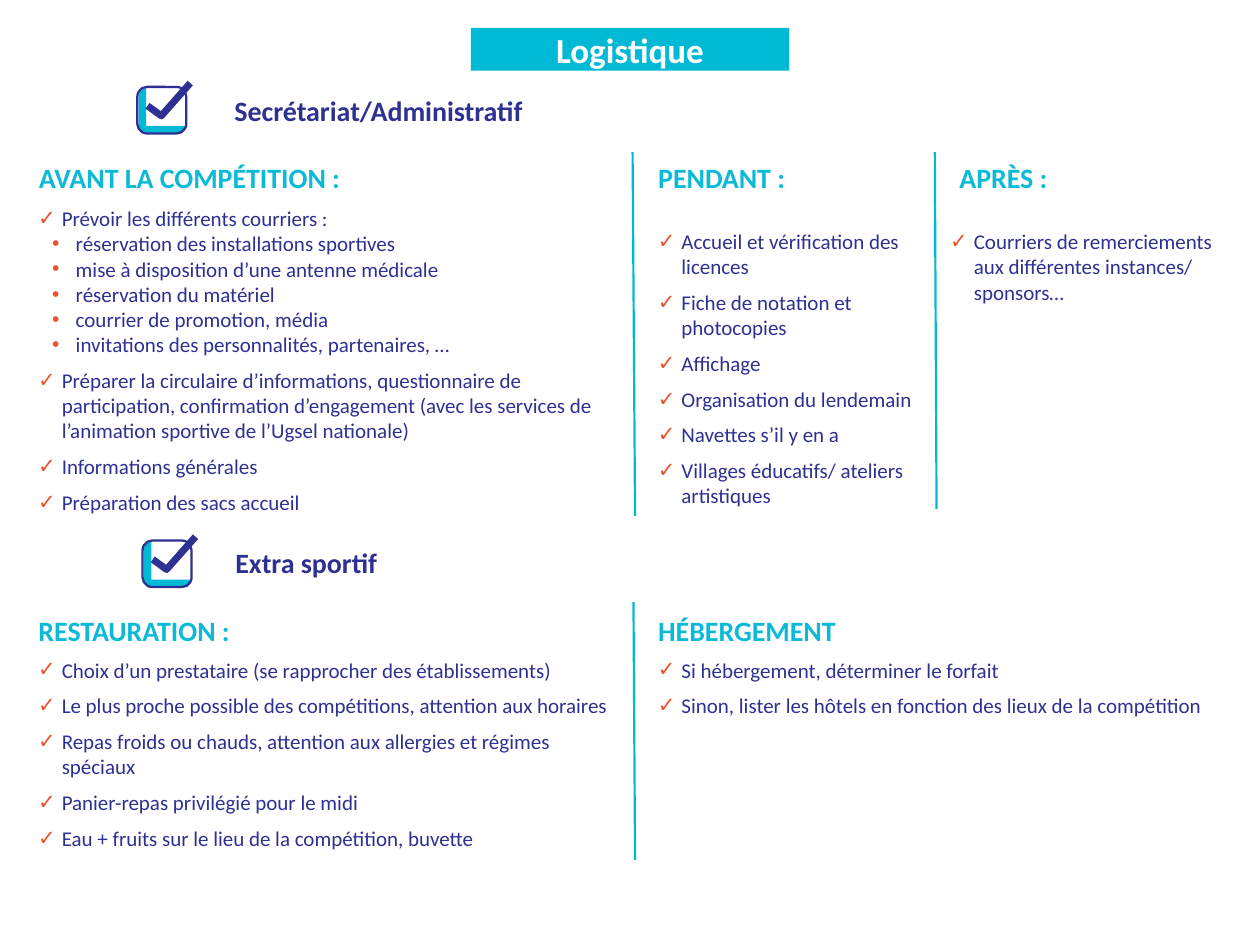
import lxml.etree
import pptx
import pptx.dml.color
import pptx.enum.shapes
import pptx.enum.text
import pptx.oxml.ns
import pptx.util

Pt = pptx.util.Pt
qn = pptx.oxml.ns.qn
RGB = pptx.dml.color.RGBColor
ALIGN = pptx.enum.text.PP_ALIGN

CYAN = RGB(0x00, 0xBA, 0xD5)
AQUA = RGB(0x0B, 0xBA, 0xD6)
NAVY = RGB(0x2E, 0x30, 0x92)
RED = RGB(0xE8, 0x53, 0x2B)
WHITE = RGB(0xFF, 0xFF, 0xFF)

LEFT, MID, RIGHT = 21.3, 375.4, 542.5
WIDE, SLIM = 333.5, 152.5

BEFORE = [
    "Prévoir les différents courriers :",
    ["réservation des installations sportives",
     "mise à disposition d’une antenne médicale",
     "réservation du matériel",
     "courrier de promotion, média",
     "invitations des personnalités, partenaires, …"],
    "Préparer la circulaire d’informations, questionnaire de participation, "
    "confirmation d’engagement (avec les services de l’animation sportive "
    "de l’Ugsel nationale)",
    "Informations générales",
    "Préparation des sacs accueil",
]
DURING = [
    "Accueil et vérification des licences",
    "Fiche de notation et photocopies",
    "Affichage",
    "Organisation du lendemain",
    "Navettes s’il y en a",
    "Villages éducatifs/ ateliers artistiques",
]
AFTER = ["Courriers de remerciements aux différentes instances/ sponsors…"]
MEALS = [
    "Choix d’un prestataire (se rapprocher des établissements)",
    "Le plus proche possible des compétitions, attention aux horaires",
    "Repas froids ou chauds, attention aux allergies et régimes spéciaux",
    "Panier-repas privilégié pour le midi",
    "Eau + fruits sur le lieu de la compétition, buvette",
]
HOTELS = [
    "Si hébergement, déterminer le forfait",
    "Sinon, lister les hôtels en fonction des lieux de la compétition",
]


class Page:
    font = "Calibri"

    def __init__(self, deck):
        self.slide = deck.slides.add_slide(deck.slide_layouts[4])
        self.shapes = self.slide.shapes
        self.bodies = [p for p in self.slide.placeholders
                       if p.placeholder_format.idx > 0]

    def place(self, shape, x, y, w, h, top=0.7):
        """Move a text shape and strip its frame to a bare, wrapped box."""
        shape.left, shape.top, shape.width, shape.height = map(Pt, (x, y, w, h))
        frame = shape.text_frame
        frame.word_wrap = True
        frame.auto_size = pptx.enum.text.MSO_AUTO_SIZE.NONE
        frame.vertical_anchor = pptx.enum.text.MSO_ANCHOR.TOP
        frame.margin_left = frame.margin_right = frame.margin_bottom = 0
        frame.margin_top = Pt(top)
        return frame

    def box(self):
        return self.shapes.add_textbox(0, 0, 0, 0)

    def style(self, para, size, color, bold=False, align=ALIGN.LEFT):
        para.alignment = align
        for run in para.runs:
            run.font.name, run.font.size = self.font, Pt(size)
            run.font.bold, run.font.color.rgb = bold, color

    def title(self, text, x, y, w, h):
        shape = self.shapes.title
        frame = self.place(shape, x, y, w, h, 0)
        frame.text = text
        shape.fill.solid()
        shape.fill.fore_color.rgb = CYAN
        self.style(frame.paragraphs[0], 20, WHITE, True, ALIGN.CENTER)

    def head(self, text, x, y, w, color=AQUA, inset=0.7):
        frame = self.place(self.box(), x, y, w, 20)
        frame.text = text
        para = frame.paragraphs[0]
        para._p.get_or_add_pPr().set("marL", str(Pt(inset)))
        para.line_spacing = Pt(19.1)
        self.style(para, 16, color, True)

    def bullet(self, para, mark, inset):
        props = para._p.get_or_add_pPr()
        props.set("marL", str(Pt(inset)))
        props.set("indent", str(Pt(-13.5)))
        tint = lxml.etree.SubElement(props, qn("a:buClr"))
        lxml.etree.SubElement(tint, qn("a:srgbClr")).set("val", str(RED))
        lxml.etree.SubElement(props, qn("a:buFont")).set("typeface", "Arial")
        lxml.etree.SubElement(props, qn("a:buChar")).set("char", mark)

    def list(self, items, x, y, w, h):
        """Fill the next free body placeholder, or a text box if none is left."""
        shape = self.bodies.pop(0) if self.bodies else self.box()
        frame = self.place(shape, x, y, w, h)
        rows = []
        for item in items:
            if isinstance(item, str):
                rows.append((item, False))
            else:
                rows += [(text, True) for text in item]
        for i, (text, sub) in enumerate(rows):
            para = frame.add_paragraph() if i else frame.paragraphs[0]
            para.text = text
            para.level = int(sub)
            self.bullet(para, "•" if sub else "✓", 22 if sub else 14)
            para.space_before = Pt(6 if i and not sub else 0)
            self.style(para, 12, NAVY,
                       align=ALIGN.JUSTIFY if sub else ALIGN.LEFT)

    def rule(self, x1, y1, x2, y2):
        line = self.shapes.add_connector(
            pptx.enum.shapes.MSO_CONNECTOR.STRAIGHT,
            Pt(x1), Pt(y1), Pt(x2), Pt(y2))
        line.line.color.rgb, line.line.width = CYAN, Pt(1.25)
        lxml.etree.SubElement(line._element.spPr, qn("a:effectLst"))

    def paint(self, shape, fill=None, width=None):
        shape.shadow.inherit = False
        if fill is None:
            shape.fill.background()
        else:
            shape.fill.solid()
            shape.fill.fore_color.rgb = fill
        if width is None:
            shape.line.fill.background()
        else:
            shape.line.color.rgb, shape.line.width = NAVY, Pt(width)

    def tick(self, x, y):
        """Draw a ticked box with a shaded lower-left edge."""
        group = self.shapes.add_group_shape().shapes

        def trace(points, close):
            spots = [(Pt(x + a), Pt(y + b)) for a, b in points]
            pen = group.build_freeform(*spots[0])
            pen.add_line_segments(spots[1:], close=close)
            return pen.convert_to_shape()

        edge = [(5, 2.9), (2.9, 3.6), (1.4, 5), (0.7, 7.2), (0.7, 25.2),
                (1.4, 27.4), (2.9, 28.2), (4.3, 28.8), (25.2, 28.8),
                (27.4, 26.6), (28, 24.5), (5, 24.5)]
        self.paint(trace(edge, True), fill=CYAN)
        square = group.add_shape(
            pptx.enum.shapes.MSO_SHAPE.ROUNDED_RECTANGLE,
            Pt(x), Pt(y + 2.2), Pt(28), Pt(26.6))
        square.adjustments[0] = 0.21
        self.paint(square, width=1.3)
        self.paint(trace([(5.8, 13), (13.7, 18.7), (30.2, 0)], False), width=4)


def main():
    deck = pptx.Presentation()
    deck.slide_width, deck.slide_height = Pt(720), Pt(540)
    page = Page(deck)
    page.title("Logistique", 269, 16, 182, 24.4)

    page.tick(78.5, 47.5)
    page.head("Secrétariat/Administratif", 126, 53, 221, NAVY, 8)
    page.head("AVANT LA COMPÉTITION :", 21.6, 91, 197)
    page.head("PENDANT :", MID, 91, 85)
    page.head("APRÈS :", 547.5, 91, 85)
    page.list(BEFORE, LEFT, 116.8, WIDE, 179)
    page.list(DURING, MID, 130, SLIM, 162)
    page.rule(361.5, 87, 362.9, 295)
    page.rule(534.2, 87, 535.2, 291)

    page.tick(81.5, 306.7)
    page.head("Extra sportif", 126, 311, 184, NAVY, 8.5)
    page.head("RESTAURATION :", LEFT, 350, 279)
    page.head("HÉBERGEMENT", MID, 350, 324)
    page.list(MEALS, LEFT, 374.8, WIDE, 112)
    page.list(HOTELS, MID, 374.8, WIDE, 36)
    page.rule(362, 344, 362.9, 491.5)

    page.list(AFTER, RIGHT, 130, SLIM, 45)
    deck.save("out.pptx")


if __name__ == "__main__":
    main()
